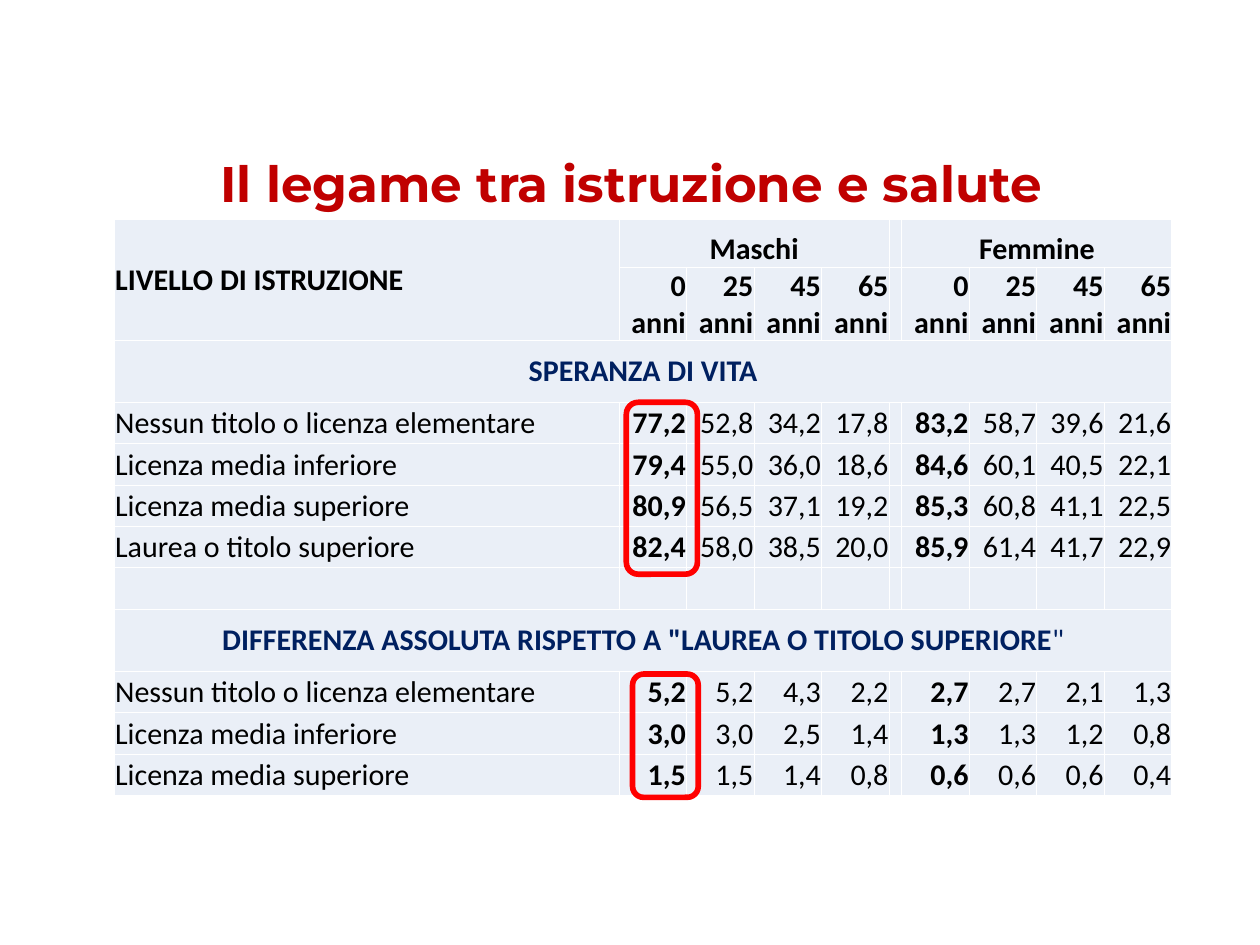
from dataclasses import dataclass
from lxml.etree import SubElement
from pptx import Presentation
from pptx.dml.color import RGBColor as RGB
from pptx.enum.shapes import MSO_SHAPE as Shape
from pptx.enum.text import MSO_ANCHOR as Anchor, PP_ALIGN as Align
from pptx.oxml.ns import qn
from pptx.util import Inches, Pt


@dataclass(frozen=True)
class Theme:
    title_font: str = "Montserrat"
    table_font: str = "Calibri"
    title_size: int = 40
    table_size: int = 24
    title: str = "C00000"
    text: str = "000000"
    section: str = "002060"
    cell: str = "EAEFF7"
    border: str = "FFFFFF"
    highlight: str = "FF0000"
    border_width: float = 1
    highlight_width: float = 4.5


@dataclass(frozen=True)
class Box:
    left: int
    top: int
    width: int
    height: int

    def across(self, percent):
        return round(self.width * percent / 100)

    def down(self, percent):
        return round(self.height * percent / 100)

    def inner(self, left, top, width, height):
        """Inner box, given in percent of this one."""
        return Box(self.left + self.across(left), self.top + self.down(top),
                   self.across(width), self.down(height))

    def place(self):
        return self.left, self.top, self.width, self.height


THEME = Theme()
PAGE = Box(0, 0, Inches(14), Inches(10.5))

# Column widths and row heights in percent of the page
AGE_WIDTHS = [5.36] * 4
COLUMNS = [40.07, *AGE_WIDTHS, 1, *AGE_WIDTHS]
HEADER, SECTION, LINE = 5.05, 6.57, 4.38
GROUP_STARTS = {1: "Maschi", 6: "Femmine"}
AGES = ["0 anni", "25 anni", "45 anni", "65 anni"]

LIFE_EXPECTANCY = [
    ("Nessun titolo o licenza elementare", "77,2 52,8 34,2 17,8", "83,2 58,7 39,6 21,6"),
    ("Licenza media inferiore", "79,4 55,0 36,0 18,6", "84,6 60,1 40,5 22,1"),
    ("Licenza media superiore", "80,9 56,5 37,1 19,2", "85,3 60,8 41,1 22,5"),
    ("Laurea o titolo superiore", "82,4 58,0 38,5 20,0", "85,9 61,4 41,7 22,9"),
]
DIFFERENCE = [
    ("Nessun titolo o licenza elementare", "5,2 5,2 4,3 2,2", "2,7 2,7 2,1 1,3"),
    ("Licenza media inferiore", "3,0 3,0 2,5 1,4", "1,3 1,3 1,2 0,8"),
    ("Licenza media superiore", "1,5 1,5 1,4 0,8", "0,6 0,6 0,6 0,4"),
]
SECTIONS = [
    ([("SPERANZA DI VITA", True)], LIFE_EXPECTANCY),
    ([('DIFFERENZA ASSOLUTA RISPETTO A "LAUREA O TITOLO SUPERIORE', True), ('"', False)],
     DIFFERENCE),
]


def add_run(paragraph, words, font, size, color, bold):
    run = paragraph.add_run()
    run.text = words
    run.font.name = font
    run.font.size = Pt(size)
    run.font.bold = bold
    run.font.color.rgb = RGB.from_string(color)


def write_cell(cell, runs, align=Align.LEFT, anchor=Anchor.MIDDLE, color=THEME.text):
    cell.vertical_anchor = anchor
    paragraph = cell.text_frame.paragraphs[0]
    paragraph.alignment = align
    for words, bold in runs:
        add_run(paragraph, words, THEME.table_font, THEME.table_size, color, bold)


def style_cell(cell):
    cell.margin_left = cell.margin_right = cell.margin_top = Inches(0.01)
    cell.margin_bottom = 0
    properties = cell._tc.get_or_add_tcPr()
    for side in ("a:lnL", "a:lnR", "a:lnT", "a:lnB"):
        edge = SubElement(properties, qn(side), w=str(Pt(THEME.border_width)))
        paint = SubElement(edge, qn("a:solidFill"))
        SubElement(paint, qn("a:srgbClr"), val=THEME.border)
    cell.fill.solid()
    cell.fill.fore_color.rgb = RGB.from_string(THEME.cell)


def add_title(slide, box):
    frame = slide.shapes.add_textbox(*box.place()).text_frame
    frame.word_wrap = True
    frame.vertical_anchor = Anchor.MIDDLE
    paragraph = frame.paragraphs[0]
    paragraph.alignment = Align.CENTER
    paragraph.line_spacing = 0.9
    add_run(paragraph, "Il legame tra istruzione e salute",
            THEME.title_font, THEME.title_size, THEME.title, True)


def write_header(table):
    level = table.cell(0, 0)
    level.merge(table.cell(1, 0))
    write_cell(level, [("LIVELLO DI ISTRUZIONE", True)])
    for start, group in GROUP_STARTS.items():
        table.cell(0, start).merge(table.cell(0, start + len(AGES) - 1))
        write_cell(table.cell(0, start), [(group, True)], Align.CENTER, Anchor.BOTTOM)
        for column, age in enumerate(AGES, start):
            write_cell(table.cell(1, column), [(age, True)], Align.RIGHT, Anchor.BOTTOM)


def write_section(table, top, heading, levels):
    table.cell(top, 0).merge(table.cell(top, len(COLUMNS) - 1))
    write_cell(table.cell(top, 0), heading, Align.CENTER, color=THEME.section)
    for row, (level, *groups) in enumerate(levels, top + 1):
        write_cell(table.cell(row, 0), [(level, False)])
        for start, values in zip(GROUP_STARTS, groups):
            for column, value in enumerate(values.split(), start):
                write_cell(table.cell(row, column), [(value, column == start)], Align.RIGHT)


def add_education_table(slide, box):
    # Two header rows, then each section, with an empty line between them
    first, second = ([SECTION] + [LINE] * len(levels) for _, levels in SECTIONS)
    heights = [HEADER] * 2 + first + [LINE] + second
    table = slide.shapes.add_table(len(heights), len(COLUMNS), *box.place()).table
    table.first_row = table.horz_banding = False
    for column, width in zip(table.columns, COLUMNS):
        column.width = PAGE.across(width)
    for row, height in zip(table.rows, heights):
        row.height = PAGE.down(height)
    for cell in table.iter_cells():
        style_cell(cell)

    write_header(table)
    top = 2
    for heading, levels in SECTIONS:
        write_section(table, top, heading, levels)
        top += len(levels) + 2


def add_highlight(slide, box):
    frame = slide.shapes.add_shape(Shape.ROUNDED_RECTANGLE, *box.place())
    frame.shadow.inherit = False
    frame.fill.background()
    frame.line.color.rgb = RGB.from_string(THEME.highlight)
    frame.line.width = Pt(THEME.highlight_width)


def main():
    deck = Presentation()
    deck.slide_width, deck.slide_height = PAGE.width, PAGE.height
    slide = deck.slides.add_slide(deck.slide_layouts[6])

    add_title(slide, PAGE.inner(7, 16.76, 86.21, 5.9))
    table_box = PAGE.inner(9.07, 23.24, 84.21, 61.14)
    add_education_table(slide, table_box)

    # Frames around the men's values at birth
    add_highlight(slide, table_box.inner(48.85, 78.66, 6.19, 21.34))
    add_highlight(slide, table_box.inner(48.26, 31.62, 6.7, 29.75))

    deck.save("out.pptx")


if __name__ == "__main__":
    main()
